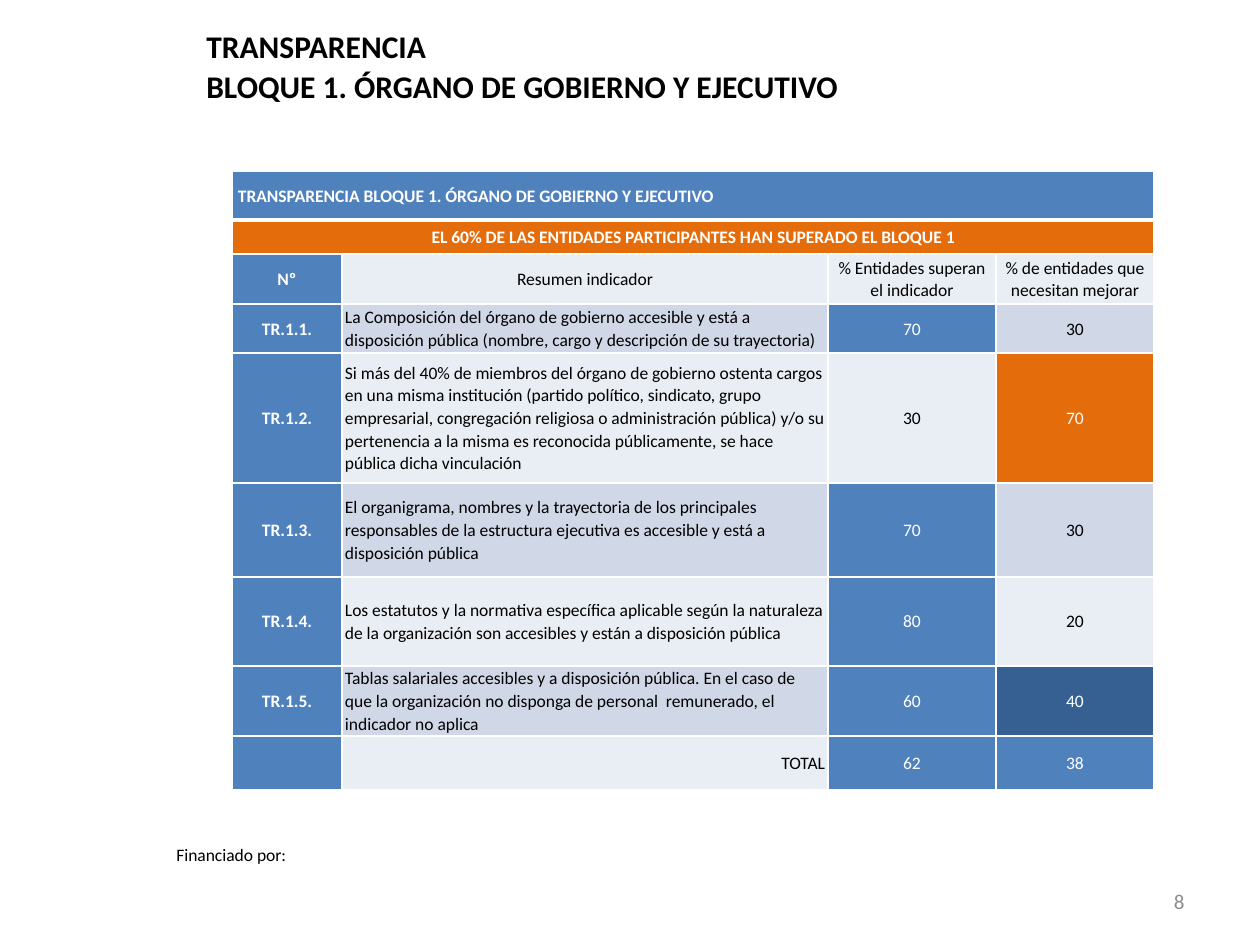
import pptx
import pptx.util
import pptx.dml.color
import pptx.enum.text
import pptx.oxml
import pptx.oxml.ns

PX = 914400 // 126
THEME = {
    "font": "Calibri", "title": 18, "number": 12, "body": 10, "spacing": 1.07,
    "black": "000000", "white": "FFFFFF", "gray": "8C8C8C",
    "blue": "4F81BD", "navy": "376092", "orange": "E46C0A",
    "light": "E9EDF4", "band": "D0D8E8",
}
ALIGN = pptx.enum.text.PP_ALIGN
ANCHOR = pptx.enum.text.MSO_ANCHOR
AUTO = pptx.enum.text.MSO_AUTO_SIZE


def write(frame, text, size="body", color="black", bold=False, align=ALIGN.LEFT, spacing=None):
    frame.word_wrap = True
    for index, line in enumerate(text.split("\n")):
        paragraph = frame.paragraphs[0] if index == 0 else frame.add_paragraph()
        paragraph.alignment = align
        paragraph.line_spacing = spacing
        run = paragraph.add_run()
        run.text = line
        run.font.name = THEME["font"]
        run.font.size = pptx.util.Pt(THEME[size])
        run.font.bold = bold
        run.font.color.rgb = pptx.dml.color.RGBColor.from_string(THEME[color])


def border(cell, widths):
    properties = cell._tc.get_or_add_tcPr()
    for index, (side, points) in enumerate(zip("LRTB", widths)):
        properties.insert(index, pptx.oxml.parse_xml(
            f'<a:ln{side} {pptx.oxml.ns.nsdecls("a")} w="{points * 12700}"><a:solidFill>'
            f'<a:srgbClr val="{THEME["white"]}"/></a:solidFill></a:ln{side}>'))


deck = pptx.Presentation()
deck.slide_width = 1260 * PX
deck.slide_height = 945 * PX
slide = deck.slides.add_slide(deck.slide_layouts[6])

page_number = slide.shapes.add_textbox(903 * PX, 876 * PX, 294 * PX, 50 * PX).text_frame
page_number.vertical_anchor = ANCHOR.MIDDLE
write(page_number, "8", size="number", color="gray", align=ALIGN.RIGHT)

funding = slide.shapes.add_textbox(164 * PX, 838 * PX, 251 * PX, 34 * PX).text_frame
funding.auto_size = AUTO.SHAPE_TO_FIT_TEXT
write(funding, "Financiado por:")

column_widths = [110, 486, 168, 158]
row_heights = [49, 34, 50, 49, 130, 94, 89, 70, 54]
block = "BLOQUE 1. ÓRGANO DE GOBIERNO Y EJECUTIVO"
rows = [
    [f"TRANSPARENCIA {block}", "", "", ""],
    ["EL 60% DE LAS ENTIDADES PARTICIPANTES HAN SUPERADO EL BLOQUE 1", "", "", ""],
    ["Nº", "Resumen indicador", "% Entidades superan el indicador",
     "% de entidades que necesitan mejorar"],
    ["TR.1.1.", "La Composición del órgano de gobierno accesible y está a disposición pública "
     "(nombre, cargo y descripción de su trayectoria)", "70", "30"],
    ["TR.1.2.", "Si más del 40% de miembros del órgano de gobierno ostenta cargos en una misma "
     "institución (partido político, sindicato, grupo empresarial, congregación religiosa o "
     "administración pública) y/o su pertenencia a la misma es reconocida públicamente, "
     "se hace pública dicha vinculación", "30", "70"],
    ["TR.1.3.", "El organigrama, nombres y la trayectoria de los principales responsables de la "
     "estructura ejecutiva es accesible y está a disposición pública", "70", "30"],
    ["TR.1.4.", "Los estatutos y la normativa específica aplicable según la naturaleza de la "
     "organización son accesibles y están a disposición pública", "80", "20"],
    ["TR.1.5.", "Tablas salariales accesibles y a disposición pública. En el caso de que la "
     "organización no disponga de personal  remunerado, el indicador no aplica", "60", "40"],
    ["", "TOTAL", "62", "38"],
]
highlights = {(1, 0): "orange", (4, 3): "orange", (7, 3): "navy"}
highlights.update({(row, 2): "blue" for row in (3, 5, 6, 7, 8)})
highlights[8, 3] = "blue"
alignments = {(0, 0): ALIGN.LEFT, (8, 1): ALIGN.RIGHT}
alignments.update({(row, 1): ALIGN.LEFT for row in range(3, 8)})

indicators = slide.shapes.add_table(
    len(rows), len(column_widths), 232 * PX, 171 * PX,
    sum(column_widths) * PX, sum(row_heights) * PX).table
indicators.first_row = False
indicators.horz_banding = False
for column, width in zip(indicators.columns, column_widths):
    column.width = width * PX
for row, height in zip(indicators.rows, row_heights):
    row.height = height * PX
for heading in range(2):
    indicators.cell(heading, 0).merge(indicators.cell(heading, 3))

for r, texts in enumerate(rows):
    for c, text in enumerate(texts):
        cell = indicators.cell(r, c)
        stripe = "band" if r in (3, 5, 7) else "light"
        fill = highlights.get((r, c), "blue" if c == 0 else stripe)
        cell.fill.solid()
        cell.fill.fore_color.rgb = pptx.dml.color.RGBColor.from_string(THEME[fill])
        border(cell, (1, 1, 3 if r == 1 else 1, 3 if r == 0 else 1))
        cell.vertical_anchor = ANCHOR.MIDDLE
        cell.margin_left = (6 if r == 0 else 3) * PX
        cell.margin_right = 3 * PX
        cell.margin_top = cell.margin_bottom = 0
        if text:
            write(cell.text_frame, text, color="black" if fill == stripe else "white",
                  bold=c == 0, align=alignments.get((r, c), ALIGN.CENTER),
                  spacing=THEME["spacing"])

title = slide.shapes.add_textbox(194 * PX, 18 * PX, 735 * PX, 94 * PX).text_frame
title.auto_size = AUTO.SHAPE_TO_FIT_TEXT
write(title, f"TRANSPARENCIA\n{block}", size="title", bold=True, spacing=THEME["spacing"])

deck.save("out.pptx")
